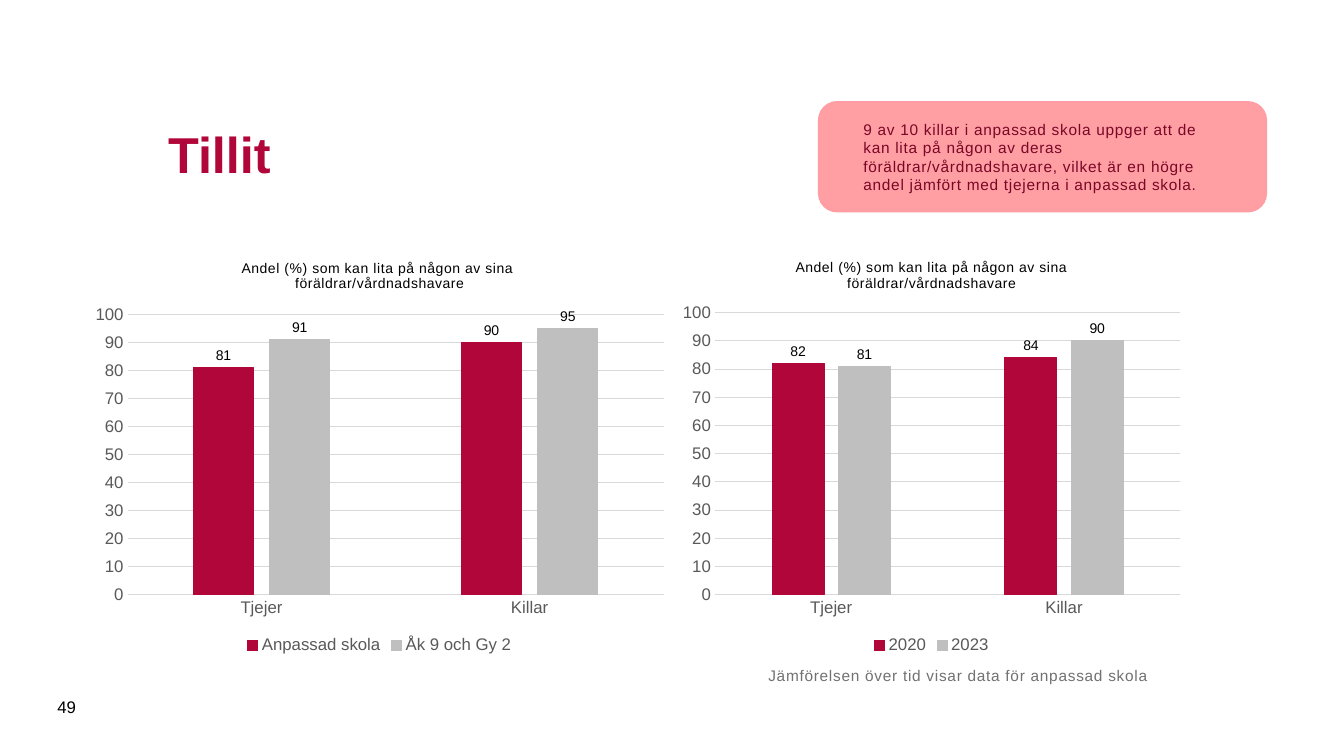
from lxml import etree
from pptx import Presentation
from pptx.chart.data import CategoryChartData
from pptx.dml.color import RGBColor
from pptx.enum.chart import XL_CHART_TYPE, XL_LABEL_POSITION, XL_LEGEND_POSITION, XL_TICK_MARK
from pptx.enum.shapes import MSO_SHAPE
from pptx.enum.text import MSO_ANCHOR, PP_ALIGN
from pptx.oxml.ns import qn
from pptx.util import Inches, Pt

COLUMNS = XL_CHART_TYPE.COLUMN_CLUSTERED
OUTSIDE_END = XL_LABEL_POSITION.OUTSIDE_END
LEGEND_BOTTOM = XL_LEGEND_POSITION.BOTTOM
NO_TICK = XL_TICK_MARK.NONE
ROUNDED = MSO_SHAPE.ROUNDED_RECTANGLE
TOP, MIDDLE = MSO_ANCHOR.TOP, MSO_ANCHOR.MIDDLE
LEFT = PP_ALIGN.LEFT

CRIMSON = RGBColor(0xB1, 0x06, 0x3A)
SILVER = RGBColor(0xBF, 0xBF, 0xBF)
PINK = RGBColor(0xFF, 0x9D, 0xA2)
WINE = RGBColor(0x79, 0x07, 0x26)
BLACK = RGBColor(0, 0, 0)
AXIS_GRAY = RGBColor(0x59, 0x59, 0x59)
GRID_GRAY = RGBColor(0xD9, 0xD9, 0xD9)
NOTE_GRAY = RGBColor(0x71, 0x71, 0x71)

FONT = "Arial"
NUMBER_FORMAT = "#,##0;#,##0"
GENDERS = ["Tjejer", "Killar"]


def style_font(font, size, color, bold=False):
    """Set typeface, size, colour and weight of a font."""
    font.name, font.size, font.bold = FONT, Pt(size), bold
    font.color.rgb = color


def write_text(frame, text, size=11, color=BLACK, bold=False, spacing=0,
               anchor=None, insets=None, align=None):
    """Write formatted text into a frame, one paragraph per line."""
    if anchor is not None:
        frame.vertical_anchor = anchor
    if insets is not None:
        frame.margin_left = frame.margin_right = Inches(insets[0])
        frame.margin_top = frame.margin_bottom = Inches(insets[1])
    frame.word_wrap = True
    for index, line in enumerate(text.split("\n")):
        paragraph = frame.add_paragraph() if index else frame.paragraphs[0]
        if align is not None:
            paragraph.alignment = align
        run = paragraph.add_run()
        run.text = line
        style_font(run.font, size, color, bold)
        if spacing:
            run.font._element.set("spc", str(int(spacing * 100)))


def add_label(slide, box, text, **text_format):
    """Place a text box in the given box."""
    label = slide.shapes.add_textbox(*map(Inches, box))
    write_text(label.text_frame, text, **text_format)


def add_callout(slide, box, text):
    """Place the rounded key message in the given box."""
    callout = slide.shapes.add_shape(ROUNDED, *map(Inches, box))
    callout.shadow.inherit = False
    callout.fill.solid()
    callout.fill.fore_color.rgb = PINK
    fill_color = callout.fill._xPr.find(qn("a:solidFill"))[0]
    etree.SubElement(fill_color, qn("a:alpha")).set("val", "98000")
    callout.line.color.rgb = PINK
    callout.line.width = Pt(1)
    write_text(callout.text_frame, text, color=WINE, spacing=0.5,
               anchor=MIDDLE, insets=(0.39, 0.2), align=LEFT)


def style_axes(chart):
    """Format the category and percentage axes of a chart."""
    genders, percent = chart.category_axis, chart.value_axis
    for axis in (genders, percent):
        axis.major_tick_mark = axis.minor_tick_mark = NO_TICK
        style_font(axis.tick_labels.font, 12, AXIS_GRAY)
    percent.minimum_scale, percent.maximum_scale = 0, 100
    percent.major_unit = 10
    percent.tick_labels.number_format = NUMBER_FORMAT
    percent.tick_labels.number_format_is_linked = False
    percent.format.line.fill.background()
    percent.has_major_gridlines = True
    for line in (genders.format.line, percent.major_gridlines.format.line):
        line.color.rgb = GRID_GRAY
        line.width = Pt(0.75)


def add_trust_chart(slide, box, title, groups):
    """Place a column chart comparing two groups in the given box."""
    data = CategoryChartData(number_format=NUMBER_FORMAT)
    data.categories = GENDERS
    for name, shares in groups.items():
        data.add_series(name, shares)
    chart = slide.shapes.add_chart(COLUMNS, *map(Inches, box), data).chart
    style_font(chart.font, 10, BLACK)
    chart.has_title = True
    write_text(chart.chart_title.text_frame, title, size=10, spacing=0.5)
    chart.chart_title.include_in_layout = False
    chart.has_legend = True
    chart.legend.position = LEGEND_BOTTOM
    chart.legend.include_in_layout = False
    style_font(chart.legend.font, 12, AXIS_GRAY)
    style_axes(chart)

    plot = chart.plots[0]
    plot.gap_width, plot.overlap = 219, -27
    plot.vary_by_categories = False
    for group, color in zip(plot.series, (CRIMSON, SILVER)):
        group.format.fill.solid()
        group.format.fill.fore_color.rgb = color
        group.format.line.color.rgb = color
        group.format.line.width = Pt(0.75)
        labels = group.data_labels
        labels.show_value = True
        labels.position = OUTSIDE_END
        labels.number_format = NUMBER_FORMAT
        labels.number_format_is_linked = False
        style_font(labels.font, 10, BLACK)


def build_trust_slide(presentation):
    """Build the slide on trust in parents or guardians."""
    slide = presentation.slides.add_slide(presentation.slide_layouts[6])
    add_label(slide, (1.57, 0.81, 10.24, 1.42), "Tillit", size=36,
              color=CRIMSON, bold=True, anchor=MIDDLE)
    add_label(slide, (0.47, 6.81, 0.57, 0.4), "49", size=12, anchor=MIDDLE)
    question = "Andel (%) som kan lita på någon av sina "
    subject = "föräldrar/vårdnadshavare"
    add_trust_chart(slide, (0.83, 2.4, 5.87, 4.13), question + "\n" + subject,
                    {"Anpassad skola": (81, 90), "Åk 9 och Gy 2": (91, 95)})
    add_trust_chart(slide, (6.67, 2.4, 5.14, 4.13), question + subject,
                    {"2020": (82, 84), "2023": (81, 90)})
    add_callout(slide, (8.12, 1.01, 4.44, 1.09),
                "9 av 10 killar i anpassad skola uppger att de kan lita på "
                "någon av deras föräldrar/vårdnadshavare, vilket är en högre "
                "andel jämfört med tjejerna i anpassad skola.")
    add_label(slide, (7.62, 6.61, 5.31, 0.94),
              "Jämförelsen över tid visar data för anpassad skola",
              color=NOTE_GRAY, spacing=0.5, anchor=TOP, insets=(0, 0))


def main():
    """Create and save the presentation."""
    presentation = Presentation()
    presentation.slide_width = Inches(13.33)
    presentation.slide_height = Inches(7.5)
    build_trust_slide(presentation)
    presentation.save("out.pptx")


if __name__ == "__main__":
    main()
